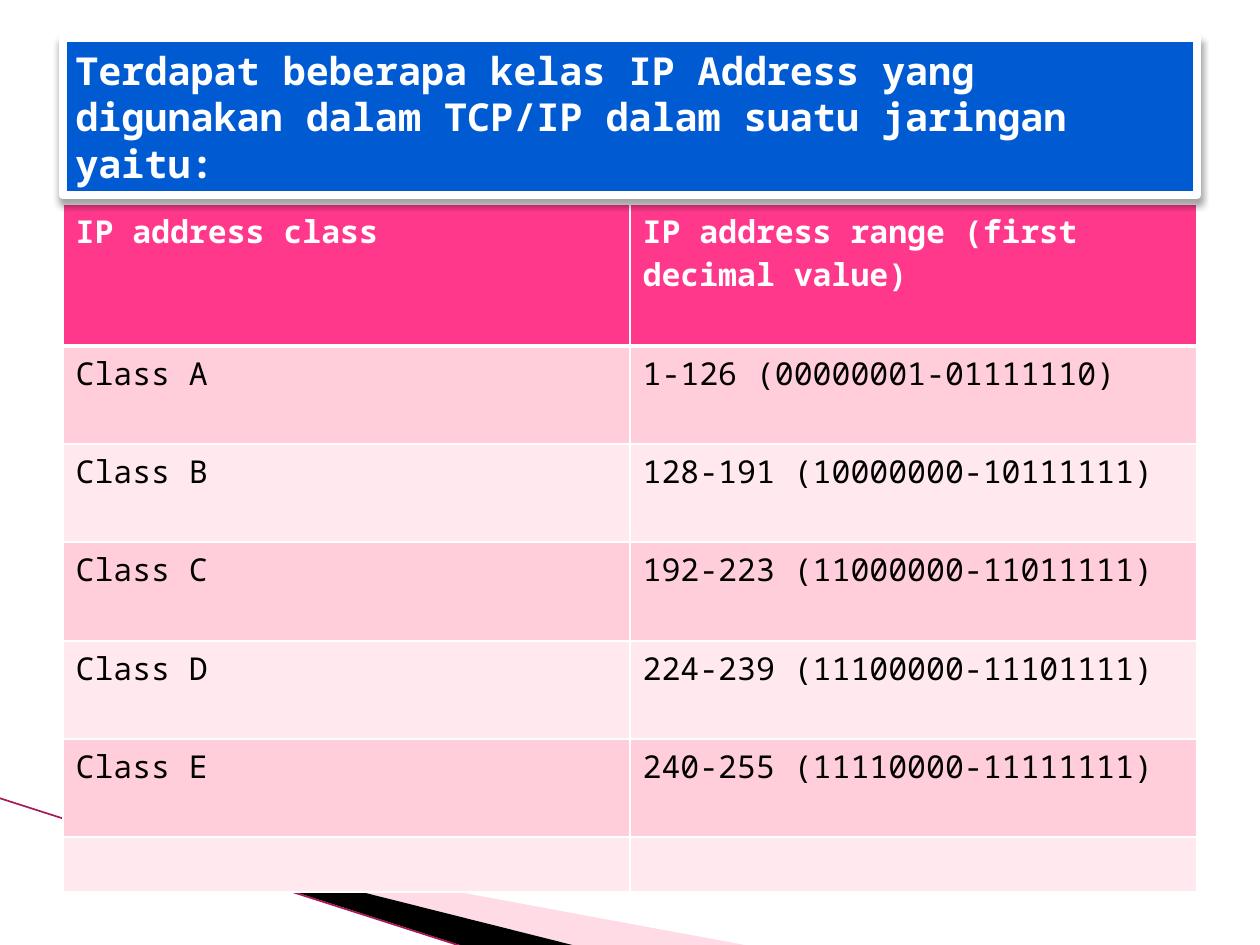
from typing import NamedTuple

import pptx
import pptx.dml.color
import pptx.enum.shapes
import pptx.enum.text
import pptx.oxml
import pptx.oxml.ns
import pptx.util
from lxml import etree

EMU_PER_PX = 914400 / 126
FONT = "Noto Sans Mono"
WHITE, BLACK = "FFFFFF", "000000"
HEADER_FILL, BAND_FILLS = "FF388C", ("FFCEDA", "FFE8EE")
TITLE = ("Terdapat beberapa kelas IP Address yang digunakan dalam TCP/IP "
         "dalam suatu jaringan yaitu:")


class Wedge(NamedTuple):
    frame: tuple[int, int, int, int]
    points: tuple[tuple[int, int], ...]
    fill: str
    opacity: int


class TableRow(NamedTuple):
    name: str
    span: str
    height: int


WEDGES = (
    Wedge((98, 689, 524, 199),
          ((69, 820), (750, 946), (575, 946), (69, 819)), "FFA5BF", 40),
    Wedge((-8, 798, 524, 116),
          ((67, 818), (576, 946), (469, 948), (68, 819)), BLACK, 100),
)
ROWS = (
    TableRow("IP address class", "IP address range (first decimal value)", 142),
    TableRow("Class A", "1-126 (00000001-01111110)", 98),
    TableRow("Class B", "128-191 (10000000-10111111)", 98),
    TableRow("Class C", "192-223 (11000000-11011111)", 99),
    TableRow("Class D", "224-239 (11100000-11101111)", 98),
    TableRow("Class E", "240-255 (11110000-11111111)", 98),
    TableRow("", "", 55),
)


def px(*lengths: int) -> list[pptx.util.Emu]:
    return [pptx.util.Emu(round(length * EMU_PER_PX)) for length in lengths]


def rgb(value: str) -> pptx.dml.color.RGBColor:
    return pptx.dml.color.RGBColor.from_string(value)


def paint(target, color: str) -> None:
    """Fill a shape, cell or line with one solid colour."""
    target.fill.solid()
    target.fill.fore_color.rgb = rgb(color)


def write(frame, text: str, size: int, color: str, bold: bool) -> None:
    frame.text = text
    para = frame.paragraphs[0]
    para.alignment = pptx.enum.text.PP_ALIGN.LEFT
    for span in para.runs:
        span.font.name = FONT
        span.font.size = pptx.util.Pt(size)
        span.font.bold = bold
        span.font.color.rgb = rgb(color)


def set_frame(shape, wedge: Wedge) -> None:
    """Give the wedge its own frame, which its outline may overrun."""
    left, top, width, height = wedge.frame
    shape.left, shape.top, shape.width, shape.height = px(*wedge.frame)
    outline = next(shape._element.iter(pptx.oxml.ns.qn("a:path")))
    for name, length in zip("wh", px(width, height)):
        outline.set(name, str(int(length)))
    for node, (x, y) in zip(outline.iter(pptx.oxml.ns.qn("a:pt")), wedge.points):
        for name, length in zip("xy", px(x - left, y - top)):
            node.set(name, str(int(length)))


def draw_wedge(page, wedge: Wedge) -> None:
    builder = page.shapes.build_freeform(*wedge.points[0], scale=EMU_PER_PX)
    builder.add_line_segments(wedge.points[1:], close=False)
    shape = builder.convert_to_shape()
    set_frame(shape, wedge)
    shape.shadow.inherit = False
    shape.line.fill.background()
    paint(shape, wedge.fill)
    if wedge.opacity < 100:
        color = shape.fill._xPr.find(".//" + pptx.oxml.ns.qn("a:srgbClr"))
        alpha = etree.SubElement(color, pptx.oxml.ns.qn("a:alpha"))
        alpha.set("val", str(wedge.opacity * 1000))


def draw_edge(page) -> None:
    edge = page.shapes.add_connector(
        pptx.enum.shapes.MSO_CONNECTOR.STRAIGHT, *px(-1, 798, 467, 948))
    paint(edge.line, "A8185A")
    edge.line.width = pptx.util.Pt(0.95)
    etree.SubElement(edge._element.spPr, pptx.oxml.ns.qn("a:effectLst"))


def border(cell, widths: dict[str, int]) -> None:
    """Give a cell white borders; widths are points by side, in schema order."""
    properties = cell._tc.get_or_add_tcPr()
    for index, (side, width) in enumerate(widths.items()):
        properties.insert(index, pptx.oxml.parse_xml(
            f'<a:ln{side} {pptx.oxml.ns.nsdecls("a")} w="{pptx.util.Pt(width)}">'
            f'<a:solidFill><a:srgbClr val="{WHITE}"/></a:solidFill></a:ln{side}>'))


def draw_table(page) -> None:
    height = sum(row.height for row in ROWS)
    frame = page.shapes.add_table(len(ROWS), 2, *px(63, 204, 1134, height))
    table = frame.table
    for index, row in enumerate(ROWS):
        table.rows[index].height = px(row.height)[0]
        header = index == 0
        widths = {"L": 1, "R": 1, "T": 3 if index == 1 else 1, "B": 3 if header else 1}
        for cell, text in zip(table.rows[index].cells, (row.name, row.span)):
            paint(cell, HEADER_FILL if header else BAND_FILLS[(index - 1) % 2])
            border(cell, widths)
            write(cell.text_frame, text, 18, WHITE if header else BLACK, header)


def draw_title(page) -> None:
    box = page.shapes.add_shape(
        pptx.enum.shapes.MSO_SHAPE.RECTANGLE, *px(63, 38, 1134, 157))
    paint(box, "005BD3")
    paint(box.line, WHITE)
    box.line.width = pptx.util.Pt(5)
    box.shadow.inherit = False
    effects = box._element.spPr.find(pptx.oxml.ns.qn("a:effectLst"))
    effects.append(pptx.oxml.parse_xml(
        f'<a:outerShdw {pptx.oxml.ns.nsdecls("a")} blurRad="{pptx.util.Pt(4)}" '
        f'dist="{pptx.util.Pt(3)}" dir="5400000" rotWithShape="0">'
        f'<a:srgbClr val="{BLACK}"><a:alpha val="35000"/></a:srgbClr></a:outerShdw>'))
    frame = box.text_frame
    frame.word_wrap = True
    frame.vertical_anchor = pptx.enum.text.MSO_ANCHOR.MIDDLE
    write(frame, TITLE, 22, WHITE, True)


def main() -> None:
    deck = pptx.Presentation()
    deck.slide_width, deck.slide_height = px(1260, 945)
    page = deck.slides.add_slide(deck.slide_layouts[6])
    for wedge in WEDGES:
        draw_wedge(page, wedge)
    draw_edge(page)
    draw_table(page)
    draw_title(page)
    deck.save("out.pptx")


if __name__ == "__main__":
    main()
